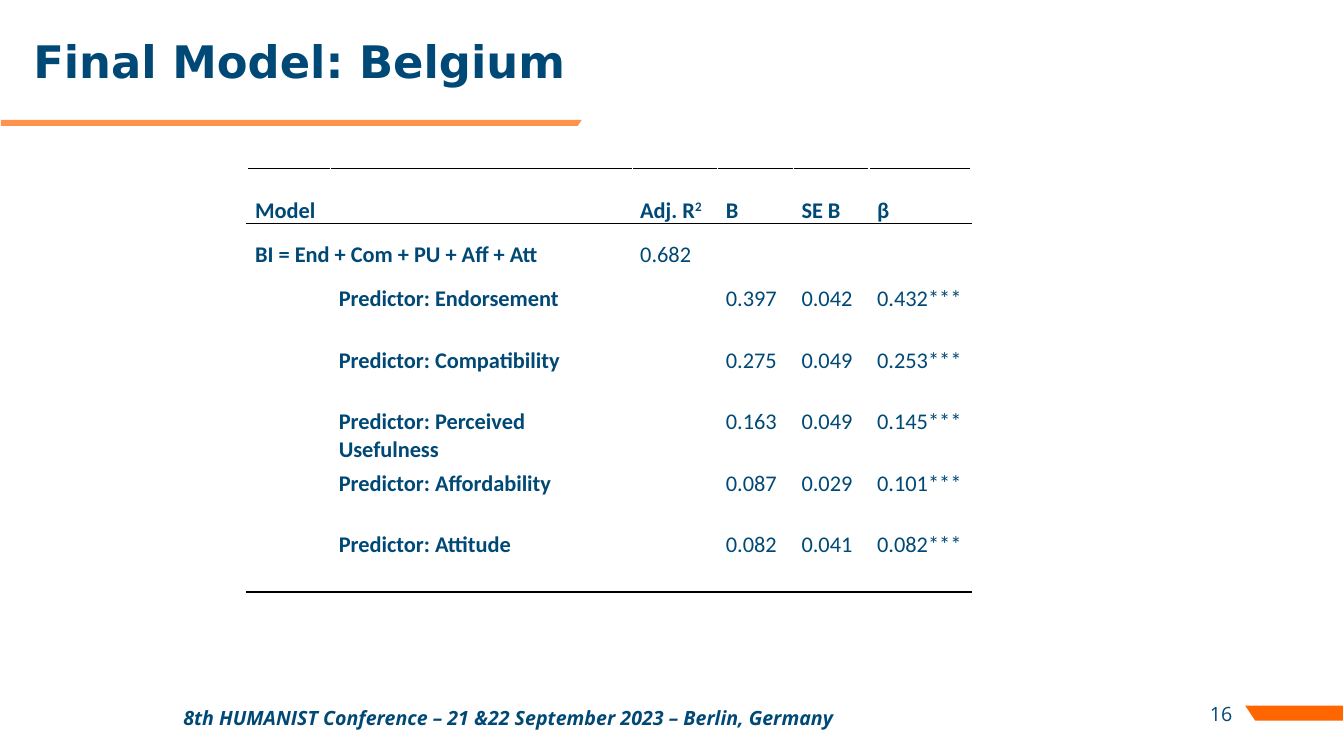
from lxml import etree
from pptx import Presentation
from pptx.dml.color import RGBColor
from pptx.enum.text import MSO_ANCHOR, PP_ALIGN
from pptx.oxml.ns import qn
from pptx.util import Inches, Pt

TOP, MIDDLE, BOTTOM = MSO_ANCHOR.TOP, MSO_ANCHOR.MIDDLE, MSO_ANCHOR.BOTTOM
LEFT, RIGHT, JUSTIFY = PP_ALIGN.LEFT, PP_ALIGN.RIGHT, PP_ALIGN.JUSTIFY

NAVY, ORANGE, BLACK = "004976", "FF6600", "000000"
COL_WIDTHS = [0.83, 2.99, 0.85, 0.75, 0.75, 1.01]
HEADER_HEIGHT, ROW_HEIGHT = 0.5, 0.61
ROWS = [
    ["Model", "", "Adj. R2", "B", "SE B", "β"],
    ["BI = End + Com + PU + Aff + Att", "", "0.682", "", "", ""],
    ["", "Predictor: Endorsement", "", "0.397", "0.042", "0.432***"],
    ["", "Predictor: Compatibility", "", "0.275", "0.049", "0.253***"],
    ["", "Predictor: Perceived Usefulness", "", "0.163", "0.049", "0.145***"],
    ["", "Predictor: Affordability", "", "0.087", "0.029", "0.101***"],
    ["", "Predictor: Attitude", "", "0.082", "0.041", "0.082***"],
]


def rgb(color):
    return RGBColor.from_string(color)


def add_border(cell, side):
    """Draw a 1 pt black line on a cell side; call before setting the fill."""
    ln = etree.SubElement(cell._tc.get_or_add_tcPr(), qn(f"a:ln{side}"), w=str(Pt(1)))
    fill = etree.SubElement(ln, qn("a:solidFill"))
    etree.SubElement(fill, qn("a:srgbClr"), val=BLACK)


class SlideBuilder:
    def __init__(self, slide):
        self.slide = slide

    def format_run(self, r, font, size, bold=False, italic=False):
        r.font.name = font
        r.font.size = Pt(size)
        r.font.bold = bold
        r.font.italic = italic
        r.font.color.rgb = rgb(NAVY)

    def title(self, text, left, top, width, height):
        sp = self.slide.shapes.title
        sp.left, sp.top = Inches(left), Inches(top)
        sp.width, sp.height = Inches(width), Inches(height)
        tf = sp.text_frame
        tf.text = text
        tf.vertical_anchor = MIDDLE
        p = tf.paragraphs[0]
        p.alignment = LEFT
        p.line_spacing = 0.9
        self.format_run(p.runs[0], "DejaVu Sans", 32, bold=True)

    def text(self, text, left, top, width, height, align=LEFT, anchor=TOP, strong=False):
        box = self.slide.shapes.add_textbox(
            Inches(left), Inches(top), Inches(width), Inches(height))
        tf = box.text_frame
        tf.word_wrap = True
        tf.vertical_anchor = anchor
        tf.text = text
        p = tf.paragraphs[0]
        p.alignment = align
        self.format_run(p.runs[0], "Open Sans", 14, bold=strong, italic=strong)

    def bar(self, points, opacity=100):
        start, *rest = [(Inches(x), Inches(y)) for x, y in points]
        builder = self.slide.shapes.build_freeform(*start)
        builder.add_line_segments(rest, close=True)
        sp = builder.convert_to_shape()
        sp.shadow.inherit = False
        sp.fill.solid()
        sp.fill.fore_color.rgb = rgb(ORANGE)
        sp.line.fill.background()
        if opacity < 100:
            color = sp._element.spPr.find(qn("a:solidFill")).find(qn("a:srgbClr"))
            etree.SubElement(color, qn("a:alpha"), val=str(opacity * 1000))

    def cell(self, cell, text, row, col):
        header = row == 0
        if row <= 1:
            add_border(cell, "T")
        if header or row == len(ROWS) - 1:
            add_border(cell, "B")
        cell.fill.background()
        if not text:
            return
        cell.margin_left = cell.margin_right = Inches(0.08)
        cell.margin_top, cell.margin_bottom = Inches(0.01), 0
        cell.vertical_anchor = {0: BOTTOM, 1: MIDDLE}.get(row, TOP)
        p = cell.text_frame.paragraphs[0]
        p.text = text
        p.alignment = LEFT if "Perceived" in text else JUSTIFY
        if header:
            p.line_spacing = 2.0
            p.space_after = Pt(8)
        if text.endswith("R2"):
            p.text = text[:-1]
            exponent = p.add_run()
            exponent.text = text[-1]
            exponent._r.get_or_add_rPr().set("baseline", "30000")
        for r in p.runs:
            self.format_run(r, "Calibri", 16, bold=header or col < 2)

    def table(self, rows, left, top):
        height = HEADER_HEIGHT + ROW_HEIGHT * (len(rows) - 1)
        frame = self.slide.shapes.add_table(
            len(rows), len(COL_WIDTHS), Inches(left), Inches(top),
            Inches(sum(COL_WIDTHS)), Inches(height))
        table = frame.table
        table.first_row = table.horz_banding = False
        for column, width in zip(table.columns, COL_WIDTHS):
            column.width = Inches(width)
        for i, values in enumerate(rows):
            table.rows[i].height = Inches(ROW_HEIGHT if i else HEADER_HEIGHT)
            for j, value in enumerate(values):
                self.cell(table.cell(i, j), value, i, j)
        table.cell(1, 0).merge(table.cell(1, 1))


def main():
    prs = Presentation()
    prs.slide_width, prs.slide_height = Inches(13.33), Inches(7.5)
    s = SlideBuilder(prs.slides.add_slide(prs.slide_layouts[5]))
    s.bar([(13.32, 7), (13.32, 7.15), (12.45, 7.15), (12.35, 7)])
    s.bar([(0.01, 1.19), (0.01, 1.25), (5.73, 1.25), (5.77, 1.19)], opacity=70)
    s.text("8th HUMANIST Conference – 21 &22 September 2023 – Berlin, Germany",
           1.72, 6.95, 8.06, 0.34, strong=True)
    s.text("16", 11.72, 6.88, 0.6, 0.4, align=RIGHT, anchor=MIDDLE)
    s.title("Final Model: Belgium", 0.23, 0.2, 12.73, 0.86)
    s.table(ROWS, 2.45, 1.67)
    prs.save("out.pptx")


if __name__ == "__main__":
    main()
